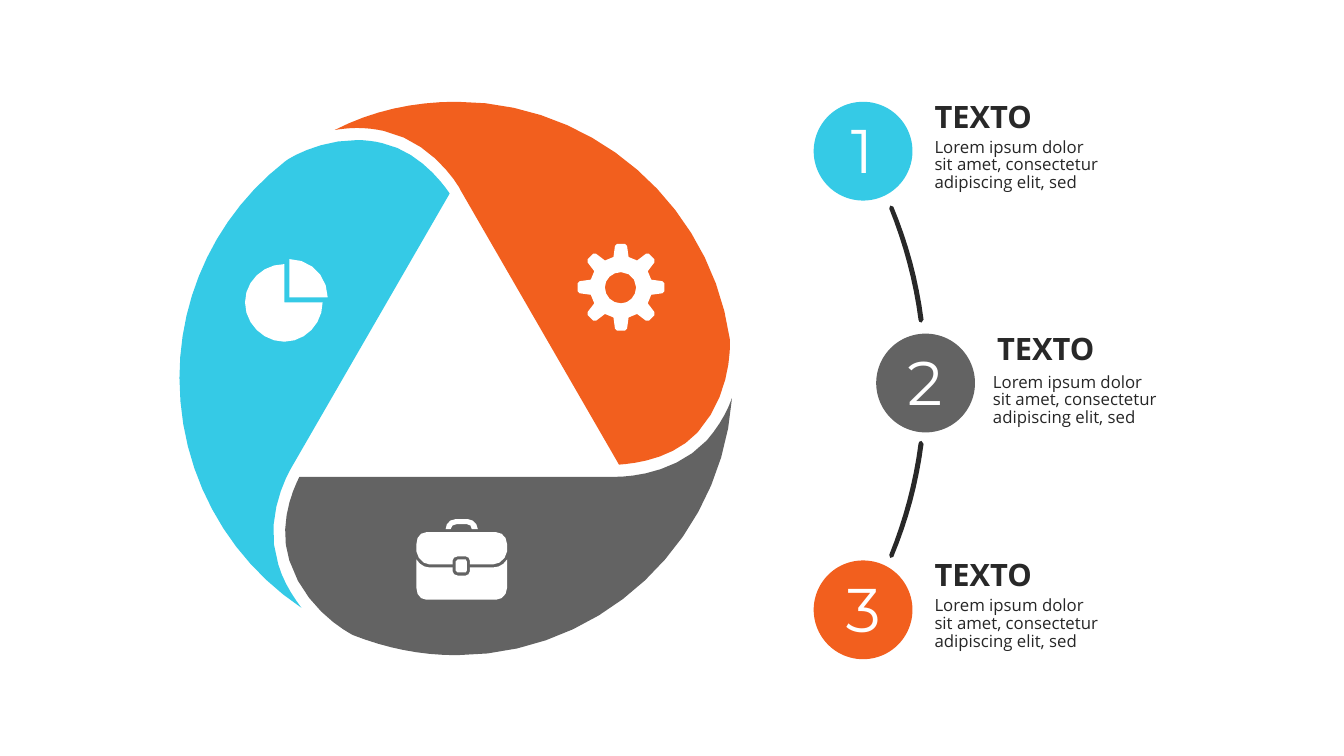
"""Three-part wheel with icons beside a numbered list of three texts."""
import math

import pptx
import pptx.dml.color
import pptx.enum.shapes
import pptx.util

RGBColor = pptx.dml.color.RGBColor
CYAN = RGBColor(0x35, 0xCA, 0xE6)
GREY = RGBColor(0x63, 0x63, 0x63)
ORANGE = RGBColor(0xF2, 0x5F, 0x1E)
WHITE = RGBColor(0xFF, 0xFF, 0xFF)
DARK = RGBColor(0x28, 0x28, 0x28)
BODY_DARK = RGBColor(0x26, 0x26, 0x26)

deck = pptx.Presentation()
deck.slide_width = pptx.util.Inches(13.33)
deck.slide_height = pptx.util.Inches(7.5)
CELL = deck.slide_width / 1333
slide = deck.slides.add_slide(deck.slide_layouts[6])


def draw_outline(contours, colour):
    """Fill contours whose steps are line ends (x, y) or Bezier curves (six numbers)."""
    builder = None
    for start, *steps in contours:
        points = [start]
        for step in steps:
            if len(step) == 2:
                points.append(step)
                continue
            corners = [points[-1], step[:2], step[2:4], step[4:]]
            pieces = max(1, round(0.75 * math.sqrt(math.dist(corners[0], corners[3]))))
            for index in range(1, pieces + 1):
                t = index / pieces
                weights = [math.comb(3, k) * t**k * (1 - t) ** (3 - k) for k in range(4)]
                points.append(tuple(sum(w * c[axis] for w, c in zip(weights, corners)) for axis in (0, 1)))
        points = [(x * CELL, y * CELL) for x, y in points]
        if builder is None:
            builder = slide.shapes.build_freeform(*points[0], scale=1.0)
        else:
            builder.move_to(*points[0])
        builder.add_line_segments(points[1:], close=True)
    shape = builder.convert_to_shape()
    shape.shadow.inherit = False
    shape.fill.solid()
    shape.fill.fore_color.rgb = colour
    shape.line.fill.background()


def add_text(words, left, top, width, height, size, font, colour, bold=False, inset=0, spacing=1.0):
    """Place one run of text in a wrapping box measured in grid cells."""
    box = slide.shapes.add_textbox(*(round(n * CELL) for n in (left, top, width, height)))
    frame = box.text_frame
    frame.word_wrap = True
    frame.margin_left = frame.margin_right = round(inset * CELL)
    frame.margin_top = frame.margin_bottom = round(inset * CELL / 2)
    para = frame.paragraphs[0]
    para.line_spacing = spacing
    span = para.add_run()
    span.text = words
    span.font.size = pptx.util.Pt(size)
    span.font.name = font
    span.font.bold = bold
    span.font.color.rgb = colour


orange_blade = [
    (724, 337), (705, 202, 588, 101, 453, 101), (410, 101, 369, 110, 332, 129),
    (339, 128, 346, 127, 354, 127), (363, 127, 372, 128, 381, 130),
    (430, 141, 456, 186, 457, 189), (614, 461), (626, 460, 666, 457, 692, 429),
    (727, 390, 724, 339, 724, 337),
]
cyan_blade = [
    (379, 142), (371, 140, 362, 139, 354, 139), (315, 139, 285, 158, 283, 160),
    (216, 212, 178, 291, 178, 375), (178, 468, 224, 553, 299, 603),
    (290, 591, 281, 577, 276, 560), (260, 512, 288, 466, 289, 464),
    (446, 192), (440, 183, 416, 150, 379, 142),
]
grey_blade = [
    (701, 437), (669, 471, 621, 473, 612, 473), (297, 473),
    (292, 483, 275, 519, 287, 556), (303, 607, 350, 630, 350, 630),
    (383, 643, 417, 650, 453, 650), (597, 650, 716, 537, 726, 395),
    (721, 409, 713, 423, 701, 437),
]
for blade, colour in ((orange_blade, ORANGE), (cyan_blade, CYAN), (grey_blade, GREY)):
    draw_outline([blade], colour)

handle = [
    (474, 525), (468, 525), (468, 522, 466, 520, 463, 520), (453, 520),
    (450, 520, 447, 522, 447, 525), (442, 525), (442, 520, 446, 515, 452, 515),
    (464, 515), (469, 515, 474, 520, 474, 525),
]
flap = [
    (426, 560), (449, 560), (449, 556), (449, 554, 451, 552, 454, 552), (462, 552),
    (464, 552, 466, 554, 466, 556), (466, 560), (489, 560),
    (496, 560, 502, 554, 503, 547), (503, 540), (503, 533, 498, 528, 492, 528),
    (423, 528), (417, 528, 413, 533, 413, 540), (413, 547), (414, 554, 420, 560, 426, 560),
]
case = [
    (489, 563), (466, 563), (466, 567), (466, 569, 464, 571, 462, 571), (454, 571),
    (451, 571, 449, 569, 449, 567), (449, 563), (426, 563),
    (421, 563, 416, 560, 413, 555), (413, 583), (413, 590, 417, 595, 423, 595),
    (492, 595), (498, 595, 503, 590, 503, 583), (503, 555), (500, 560, 495, 563, 489, 563),
]
clasp = [(462, 555), (454, 555), (452, 557), (452, 566), (454, 568), (462, 568), (463, 566), (463, 557)]
draw_outline([handle, flap, case, clasp], WHITE)

pie = [
    (282, 300), (320, 300), (320, 321, 303, 339, 282, 339),
    (261, 339, 243, 321, 243, 300), (243, 279, 261, 262, 282, 262),
]
slice_cut = [(287, 257), (287, 295), (325, 295), (325, 274, 308, 257, 287, 257)]
draw_outline([pie, slice_cut], WHITE)

gear_x, gear_y = 616, 285
tooth = [(30, -7.5), (41, -6), (43, -4), (43, 4), (41, 6), (30, 7.5)]
gear = []
for turn in range(8):
    cosine, sine = math.cos(turn * math.pi / 4), math.sin(turn * math.pi / 4)
    gear += [(gear_x + x * cosine - y * sine, gear_y + x * sine + y * cosine) for x, y in tooth]
hole = [
    (616, 301), (607, 301, 600, 294, 600, 285), (600, 277, 607, 270, 616, 270),
    (624, 270, 631, 277, 631, 285), (631, 294, 624, 301, 616, 301),
]
draw_outline([gear, hole], WHITE)

upper_link = [
    (914, 320), (912, 320, 911, 319, 911, 317), (906, 279, 896, 242, 882, 207),
    (881, 206, 882, 204, 883, 204), (884, 203, 886, 203, 886, 205),
    (901, 241, 911, 278, 916, 317), (916, 318, 915, 319, 914, 320),
]
lower_link = [tuple(757.5 - n if k % 2 else n for k, n in enumerate(step)) for step in upper_link]
for link in (upper_link, lower_link):
    draw_outline([link], DARK)

DIAMETER = 98
steps = [
    ("1", CYAN, 807, 101, 37, 110, 32),
    ("2", GREY, 869, 331, 31, 106, 35),
    ("3", ORANGE, 807, 556, 32, 110, 32),
]
for number, colour, left, top, number_shift, body_shift, body_drop in steps:
    circle = slide.shapes.add_shape(
        pptx.enum.shapes.MSO_SHAPE.OVAL, *(round(n * CELL) for n in (left, top, DIAMETER, DIAMETER))
    )
    circle.shadow.inherit = False
    circle.fill.solid()
    circle.fill.fore_color.rgb = colour
    circle.line.fill.background()
    add_text(number, left + number_shift, top + 10, 73, 91, 44, "Montserrat", WHITE)
    add_text("TEXTO", left + 120, top - 1, 162, 50, 22, "Open Sans", DARK, bold=True, spacing=0.93)
    add_text(
        "Lorem ipsum dolor sit amet, consectetur adipiscing elit, sed",
        left + body_shift, top + body_drop, 185, 71, 12, "Open Sans", BODY_DARK, inset=10, spacing=0.88,
    )

deck.save("out.pptx")
